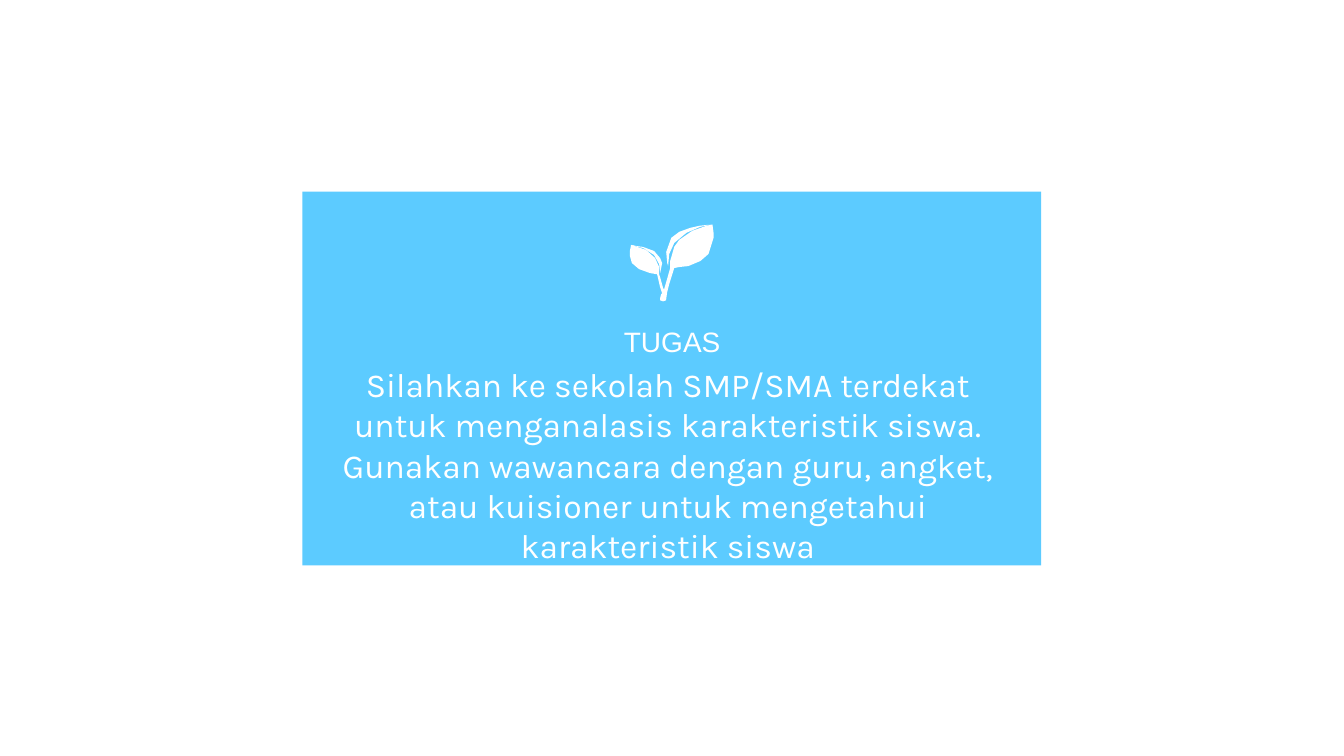
import pptx
import pptx.util
import pptx.dml.color
import pptx.enum.shapes
import pptx.enum.text
import pptx.oxml.ns
import lxml.etree

Cm = pptx.util.Cm
Pt = pptx.util.Pt
COLORS = {"panel": "17B6FF", "ink": "FFFFFF"}
UNIT = Cm(2.54) / 100  # the sprout is plotted in hundredths of an inch

# Outlines of the sprout
SPROUT = {
    "stem and leaves": [
        (625, 250), (625, 249), (626, 244), (626, 243), (632, 245), (641, 248),
        (650, 256), (654, 265), (654, 272), (655, 275), (658, 286), (659, 287),
        (663, 273), (665, 266), (665, 259), (669, 245), (674, 238), (687, 229),
        (701, 224), (706, 223), (707, 223), (708, 231), (708, 236), (703, 252),
        (695, 259), (683, 264), (674, 265), (669, 266), (664, 282), (662, 290),
        (661, 297), (661, 298), (658, 299), (655, 298), (655, 296), (656, 292),
        (657, 291), (655, 285), (652, 272), (651, 272), (645, 271), (634, 267),
        (627, 261), (625, 254), (625, 253),
    ],
    "right leaf edge": [
        (706, 223), (705, 223), (695, 225), (681, 231), (669, 241), (664, 252),
        (663, 263), (663, 264), (662, 261), (661, 250), (666, 236), (674, 230),
        (685, 226), (694, 224), (703, 223),
    ],
    "left leaf edge": [
        (627, 243), (631, 244), (638, 245), (649, 249), (655, 256), (657, 261),
        (655, 271), (655, 270), (654, 262), (649, 253), (638, 246), (628, 244),
    ],
}


def rgb(name):
    return pptx.dml.color.RGBColor.from_string(COLORS[name])


def paint(shape, color):
    shape.fill.solid()
    shape.fill.fore_color.rgb = rgb(color)
    shape.line.fill.background()
    shape.shadow.inherit = False


def add_panel(slide, box, opacity):
    panel = slide.shapes.add_shape(
        pptx.enum.shapes.MSO_SHAPE.RECTANGLE, *map(Cm, box))
    paint(panel, "panel")
    tint = next(panel.element.iter(pptx.oxml.ns.qn("a:srgbClr")))
    alpha = lxml.etree.SubElement(tint, pptx.oxml.ns.qn("a:alpha"))
    alpha.set("val", str(opacity * 1000))


def add_sprout(slide):
    sprout = slide.shapes.add_group_shape()
    for outline in SPROUT.values():
        pen = sprout.shapes.build_freeform(*outline[0], scale=UNIT)
        pen.add_line_segments(outline[1:], close=True)
        paint(pen.convert_to_shape(), "ink")


def add_text(slide, box, lines, font_format, frame_format):
    frame = slide.shapes.add_textbox(*map(Cm, box)).text_frame
    for name, value in frame_format.items():
        setattr(frame, name, value)
    frame.text = "\n".join(lines)
    for paragraph in frame.paragraphs:
        paragraph.alignment = pptx.enum.text.PP_ALIGN.CENTER
        for run in paragraph.runs:
            for name, value in font_format.items():
                setattr(run.font, name, value)
            run.font.color.rgb = rgb("ink")


def main():
    deck = pptx.Presentation()
    deck.slide_width, deck.slide_height = Cm(33.87), Cm(19.05)
    slide = deck.slides.add_slide(deck.slide_layouts[6])

    # Panel with its sprout
    add_panel(slide, (7.62, 4.83, 18.62, 9.42), opacity=70)
    add_sprout(slide)

    # Assignment
    add_text(
        slide, (8.03, 9.17, 17.55, 6.15),
        ["Silahkan ke sekolah SMP/SMA terdekat untuk menganalasis karakteristik siswa.",
         "Gunakan wawancara dengan guru, angket, atau kuisioner untuk mengetahui "
         "karakteristik siswa"],
        {"name": "Karla", "size": Pt(24)},
        {"word_wrap": True, "margin_left": Cm(0.13), "margin_right": Cm(0.08),
         "margin_top": 0, "margin_bottom": 0})

    # Heading
    add_text(
        slide, (9.09, 8.05, 15.7, 1.12), ["TUGAS"],
        {"name": "Arial", "size": Pt(20)},
        {"word_wrap": True,
         "vertical_anchor": pptx.enum.text.MSO_ANCHOR.MIDDLE})

    deck.save("out.pptx")


if __name__ == "__main__":
    main()
